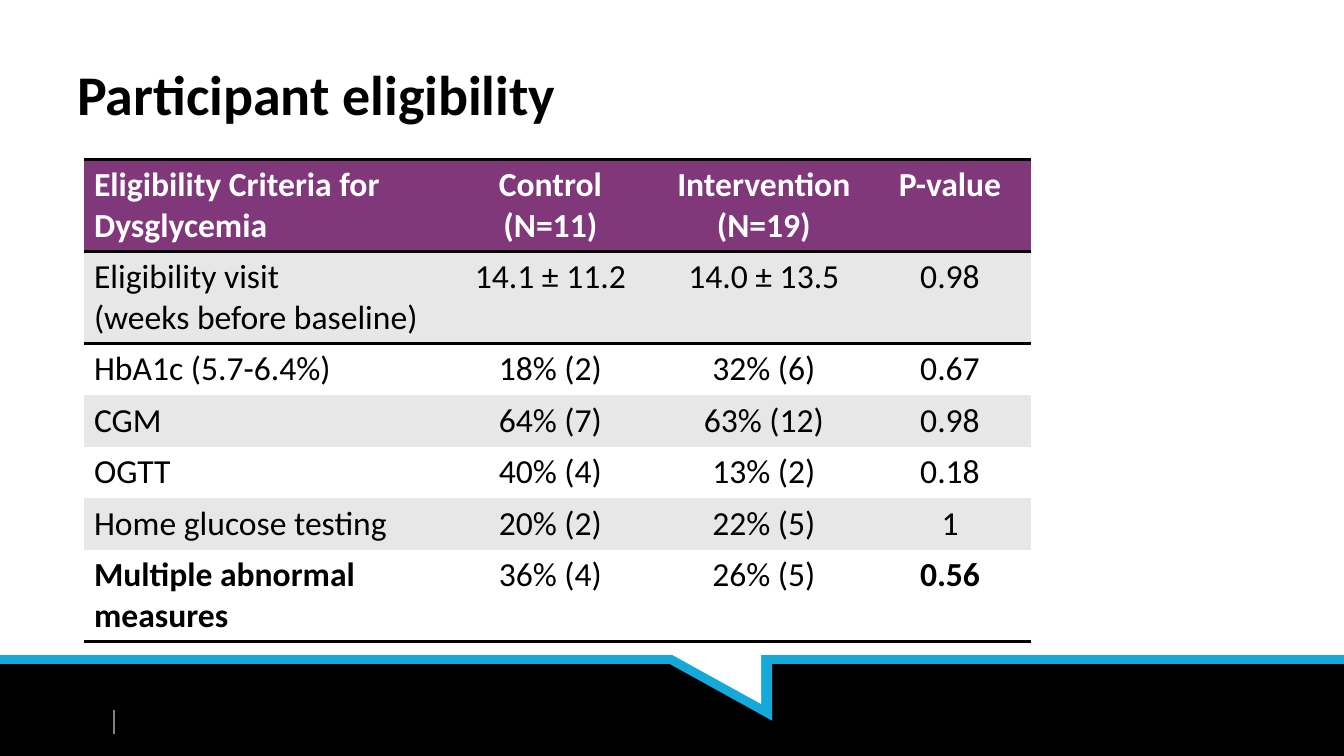
import pptx
import pptx.dml.color
import pptx.enum.shapes
import pptx.enum.text
import pptx.oxml
import pptx.oxml.ns
import pptx.util

Pt = pptx.util.Pt
RGBColor = pptx.dml.color.RGBColor
Shape = pptx.enum.shapes.MSO_SHAPE
Align = pptx.enum.text.PP_ALIGN

BLACK = RGBColor(0x00, 0x00, 0x00)
WHITE = RGBColor(0xFF, 0xFF, 0xFF)
BLUE = RGBColor(0x14, 0xA9, 0xD8)
GREY = RGBColor(0x80, 0x80, 0x80)
PURPLE = RGBColor(0x80, 0x38, 0x7B)
BAND = RGBColor(0xE7, 0xE7, 0xE7)

PAGE_WIDTH, PAGE_HEIGHT = 960, 540
NO_STYLE = "{2D5ABB26-0587-4C30-8999-92F81FD0307C}"
COLUMN_WIDTHS = [255.6, 155, 150, 116]
ONE_LINE, TWO_LINES = 36.8, 63.4
ROWS = [
    ["Eligibility Criteria for Dysglycemia", "Control\n(N=11)",
     "Intervention\n(N=19)", "P-value"],
    ["Eligibility visit\n(weeks before baseline)", "14.1 ± 11.2", "14.0 ± 13.5", "0.98"],
    ["HbA1c (5.7-6.4%)", "18% (2)", "32% (6)", "0.67"],
    ["CGM", "64% (7)", "63% (12)", "0.98"],
    ["OGTT", "40% (4)", "13% (2)", "0.18"],
    ["Home glucose testing", "20% (2)", "22% (5)", "1"],
    ["Multiple abnormal measures", "36% (4)", "26% (5)", "0.56"],
]
TALL_ROWS = {0, 1, len(ROWS) - 1}
BOLD_CELLS = {(len(ROWS) - 1, 0), (len(ROWS) - 1, 3)}


def write_text(frame, text, size=24, color=BLACK, bold=False, align=Align.LEFT):
    for index, line in enumerate(text.split("\n")):
        para = frame.paragraphs[0] if index == 0 else frame.add_paragraph()
        para.alignment = align
        span = para.add_run()
        span.text = line
        span.font.name = "Calibri"
        span.font.size = Pt(size)
        span.font.bold = bold
        span.font.color.rgb = color


def add_block(slide, kind, left, top, width, height, color, rotation=0):
    block = slide.shapes.add_shape(kind, Pt(left), Pt(top), Pt(width), Pt(height))
    block.shadow.inherit = False
    block.fill.solid()
    block.fill.fore_color.rgb = color
    block.line.fill.background()
    block.rotation = rotation


def add_rule(slide, start, end, color, weight):
    rule = slide.shapes.add_connector(
        pptx.enum.shapes.MSO_CONNECTOR.STRAIGHT, *(Pt(value) for value in start + end))
    rule.line.color.rgb = color
    rule.line.width = Pt(weight)
    properties = rule._element.spPr
    properties.append(pptx.oxml.parse_xml(
        f'<a:effectLst {pptx.oxml.ns.nsdecls("a")}/>'))


def add_border(cell, side):
    cell._tc.get_or_add_tcPr().append(pptx.oxml.parse_xml(
        f'<a:{side} {pptx.oxml.ns.nsdecls("a")} w="{Pt(2)}">'
        f'<a:solidFill><a:srgbClr val="{BLACK}"/></a:solidFill></a:{side}>'))


def build_footer(slide, left, top, width, height):
    # Black band with a blue upper edge
    add_block(slide, Shape.RECTANGLE, left, top, width, height, BLACK)
    add_rule(slide, (left, top), (left + width, top), BLUE, 6)
    # Notch: blue triangle behind a white one
    for offset_x, offset_y, color in [(476, 2, BLUE), (468, -10, WHITE)]:
        add_block(slide, Shape.RIGHT_TRIANGLE, left + offset_x, top + offset_y,
                  75.6, 41.8, color, rotation=180)
    # Thin divider
    add_rule(slide, (left + 81.4, top + 36), (left + 81.4, top + 53.3), GREY, 1)


def build_title(slide, left, top, width, height):
    title = slide.shapes.title
    title.left, title.top = Pt(left), Pt(top)
    title.width, title.height = Pt(width), Pt(height)
    title.text_frame.vertical_anchor = pptx.enum.text.MSO_ANCHOR.MIDDLE
    write_text(title.text_frame, "Participant eligibility", size=40, bold=True)


def build_table(slide, left, top, width, height):
    frame = slide.shapes.add_table(len(ROWS), len(COLUMN_WIDTHS),
                                   Pt(left), Pt(top), Pt(width), Pt(height))
    table = frame.table
    table.horz_banding = False
    table._tbl.tblPr.find(pptx.oxml.ns.qn("a:tableStyleId")).text = NO_STYLE
    for column, column_width in zip(table.columns, COLUMN_WIDTHS):
        column.width = Pt(column_width)
    for row_index, texts in enumerate(ROWS):
        header = row_index == 0
        table.rows[row_index].height = Pt(TWO_LINES if row_index in TALL_ROWS else ONE_LINE)
        for column_index, text in enumerate(texts):
            cell = table.cell(row_index, column_index)
            write_text(cell.text_frame, text,
                       color=WHITE if header else BLACK,
                       bold=header or (row_index, column_index) in BOLD_CELLS,
                       align=Align.CENTER if column_index else Align.LEFT)
            # Rules above and below the header and under the last row
            if row_index in (0, 1):
                add_border(cell, "lnT")
            if row_index in (0, len(ROWS) - 1):
                add_border(cell, "lnB")
            cell.fill.solid()
            cell.fill.fore_color.rgb = PURPLE if header else BAND if row_index % 2 else WHITE


def main():
    deck = pptx.Presentation()
    deck.slide_width, deck.slide_height = Pt(PAGE_WIDTH), Pt(PAGE_HEIGHT)
    slide = deck.slides.add_slide(deck.slide_layouts[5])
    build_footer(slide, 0, 471, PAGE_WIDTH, PAGE_HEIGHT - 471)
    build_title(slide, 48, 21.6, 864, 90)
    build_table(slide, 60, 113.8, sum(COLUMN_WIDTHS), 342)
    deck.save("out.pptx")


if __name__ == "__main__":
    main()
